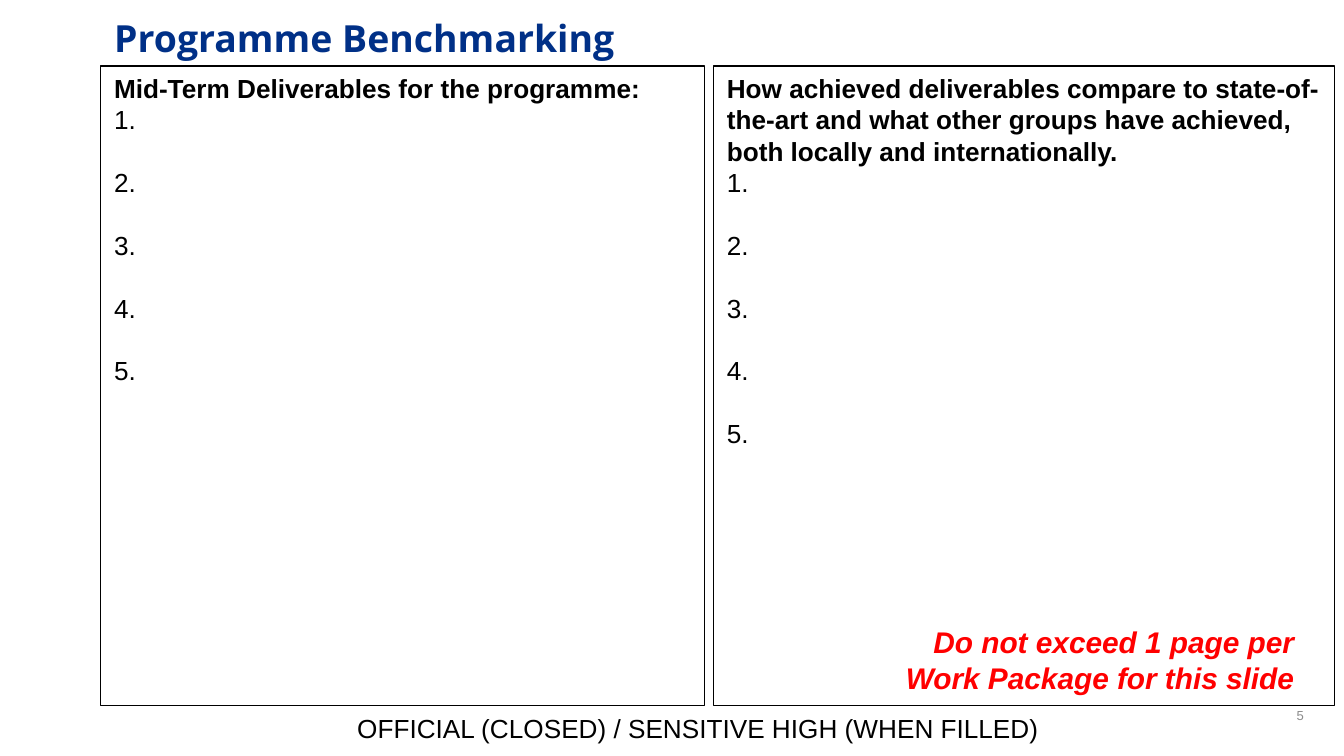
from pptx import Presentation
from pptx.util import Inches, Pt
from pptx.dml.color import RGBColor
from pptx.enum.shapes import MSO_SHAPE
from pptx.enum.text import PP_ALIGN, MSO_ANCHOR, MSO_AUTO_SIZE

TITLE = "Programme Benchmarking"
PANELS = [
    ("Mid-Term Deliverables for the programme:", 0.75, 4.49),
    ("How achieved deliverables compare to state-of-the-art and what other "
     "groups have achieved, both locally and internationally.", 5.31, 4.62),
]
ITEMS = [f"{n}." for n in range(1, 6)]
LABELS = [
    ("5", "number", (7.47, 5.17, 2.33, 0.3), PP_ALIGN.RIGHT, MSO_ANCHOR.MIDDLE),
    ("OFFICIAL (CLOSED) / SENSITIVE HIGH (WHEN FILLED)", "body",
     (2.56, 5.25, 5.43, 0.34), PP_ALIGN.LEFT, MSO_ANCHOR.TOP),
    ("Do not exceed 1 page per Work Package for this slide", "note",
     (6.33, 4.59, 3.4, 0.64), PP_ALIGN.RIGHT, MSO_ANCHOR.TOP),
]
WIDTH = 10
TOP, HEIGHT, GAP = 0.49, 4.76, 16.8
BLACK = RGBColor(0, 0, 0)
THEME = {
    "title": dict(name="Open Sans", size=Pt(20), bold=True, color=RGBColor(0, 48, 135)),
    "head": dict(name="Arial", size=Pt(14), bold=True, color=BLACK),
    "body": dict(name="Arial", size=Pt(14), bold=False, color=BLACK),
    "note": dict(name="Arial", size=Pt(16), bold=True, italic=True, color=RGBColor(255, 0, 0)),
    "number": dict(name="Arial", size=Pt(7), color=RGBColor(140, 140, 140)),
}


def write(para, text, style, align=PP_ALIGN.LEFT):
    para.text = text
    para.alignment = align
    for key, value in THEME[style].items():
        if key == "color":
            para.font.color.rgb = value
        else:
            setattr(para.font, key, value)


def frame(shape, anchor=MSO_ANCHOR.TOP):
    box = shape.text_frame
    look = dict(word_wrap=True, auto_size=MSO_AUTO_SIZE.NONE, vertical_anchor=anchor)
    for key, value in look.items():
        setattr(box, key, value)
    return box


def panel(slide, head, left, width):
    shape = slide.shapes.add_shape(
        MSO_SHAPE.RECTANGLE, *map(Inches, (left, TOP, width, HEIGHT)))
    shape.shadow.inherit = False
    shape.fill.background()
    shape.line.color.rgb = BLACK
    shape.line.width = Pt(0.75)
    box = frame(shape)
    write(box.paragraphs[0], head, "head")
    for i, item in enumerate(ITEMS):
        para = box.add_paragraph()
        write(para, item, "body")
        para.space_before = Pt(GAP if i else 0)


def main():
    deck = Presentation()
    deck.slide_width, deck.slide_height = Inches(WIDTH), Inches(WIDTH * 9 / 16)
    slide = deck.slides.add_slide(deck.slide_layouts[5])
    title = slide.shapes.title
    place = dict(left=0.75, top=0.06, width=8.66, height=0.79)
    for key, value in place.items():
        setattr(title, key, Inches(value))
    write(frame(title).paragraphs[0], TITLE, "title")
    for head, left, width in PANELS:
        panel(slide, head, left, width)
    for text, style, area, align, anchor in LABELS:
        shape = slide.shapes.add_textbox(*map(Inches, area))
        write(frame(shape, anchor).paragraphs[0], text, style, align)
    deck.save("out.pptx")


if __name__ == "__main__":
    main()
